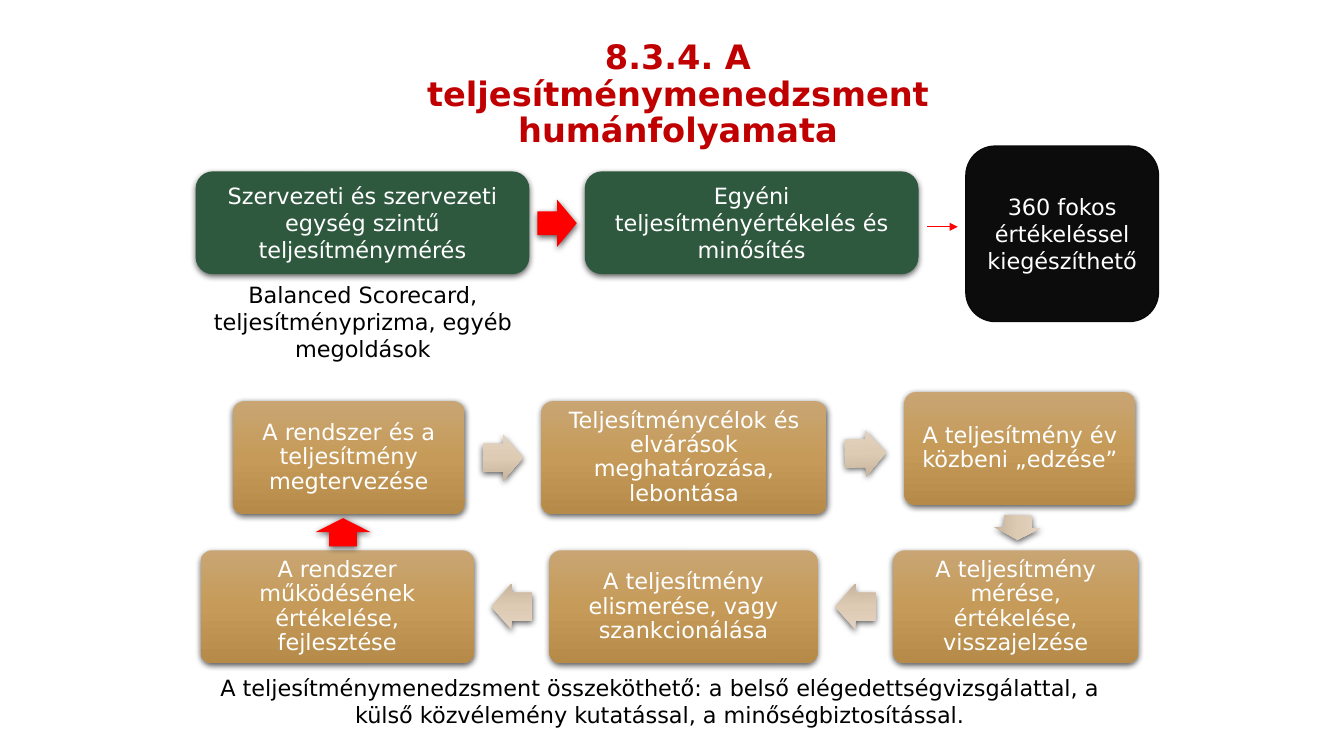
from copy import deepcopy

from lxml import etree
from pptx import Presentation
from pptx.dml.color import RGBColor
from pptx.enum.shapes import MSO_CONNECTOR, MSO_SHAPE
from pptx.enum.text import MSO_ANCHOR, PP_ALIGN
from pptx.oxml.ns import qn
from pptx.util import Inches, Pt

ROUNDED = MSO_SHAPE.ROUNDED_RECTANGLE
RIGHT_ARROW = MSO_SHAPE.RIGHT_ARROW
UP_ARROW = MSO_SHAPE.UP_ARROW
STRAIGHT = MSO_CONNECTOR.STRAIGHT
MIDDLE = MSO_ANCHOR.MIDDLE
TOP = MSO_ANCHOR.TOP
CENTER = PP_ALIGN.CENTER

FONT = "DejaVu Sans"
RED, GREEN, WHITE, BLACK = "FF0000", "2F593F", "FFFFFF", "000000"
STEP_GRADIENT = ("C8A573", "C69B59", "B68B4A")
ARROW_GRADIENT = ("E2D2C0", "DECBB4", "C8B49D")


def rgb(color):
    """Turn a hex string into a colour."""
    return RGBColor.from_string(color)


def add_effects(properties):
    """Append an empty effect list to shape properties."""
    return etree.SubElement(properties, qn("a:effectLst"))


def add_soft_shadow(shape):
    """Give a shape a soft shadow that falls downwards."""
    effects = shape._element.spPr.find(qn("a:effectLst"))
    shadow = etree.SubElement(effects, qn("a:outerShdw"), blurRad=str(Pt(4.5)),
                              dist=str(Pt(1.5)), dir="5400000", rotWithShape="0")
    tint = etree.SubElement(shadow, qn("a:srgbClr"), val=BLACK)
    etree.SubElement(tint, qn("a:alpha"), val="63000")


def paint(shape, colors):
    """Fill a shape with one colour or a three-stop vertical gradient."""
    if isinstance(colors, str):
        shape.fill.solid()
        shape.fill.fore_color.rgb = rgb(colors)
        return
    shape.fill.gradient()
    shape.fill.gradient_angle = 270
    stops = shape._element.spPr.find(".//" + qn("a:gsLst"))
    stops.append(deepcopy(stops[0]))
    for stop, position, color in zip(shape.fill.gradient_stops, (0, 0.5, 1), colors):
        stop.position = position
        stop.color.rgb = rgb(color)


def add_block(slide, kind, box, colors, shadow=True):
    """Add a borderless preset shape."""
    block = slide.shapes.add_shape(kind, *map(Inches, box))
    block.shadow.inherit = False
    block.line.fill.background()
    paint(block, colors)
    if shadow:
        add_soft_shadow(block)
    return block


def write(frame, text, color, size=16, bold=False, anchor=MIDDLE, spacing=None):
    """Write one centred, wrapped paragraph."""
    frame.word_wrap = True
    frame.vertical_anchor = anchor
    paragraph = frame.paragraphs[0]
    paragraph.alignment = CENTER
    paragraph.line_spacing = spacing
    run = paragraph.add_run()
    run.text = text
    run.font.name = FONT
    run.font.size = Pt(size)
    run.font.bold = bold
    run.font.color.rgb = rgb(color)


def add_title(slide, box, text):
    """Place and write the slide title."""
    title = slide.shapes.title
    title.left, title.top, title.width, title.height = map(Inches, box)
    write(title.text_frame, text, "C00000", 24, True, spacing=0.9)


def add_caption(slide, box, text):
    """Add plain explanatory text."""
    caption = slide.shapes.add_textbox(*map(Inches, box))
    write(caption.text_frame, text, BLACK, anchor=TOP)


def add_levels(slide, box):
    """Draw the two levels of appraisal and the optional 360 degree extension."""
    x, y, width, height = box
    middle = y + height / 2 - 0.07
    level_width, level_height = 3.31, 1.02
    levels = ("Szervezeti és szervezeti egység szintű teljesítménymérés",
              "Egyéni teljesítményértékelés és minősítés")
    for i, text in enumerate(levels):
        level_box = (x + i * 3.86, y + 0.25, level_width, level_height)
        level = add_block(slide, ROUNDED, level_box, GREEN)
        write(level.text_frame, text, WHITE)
    add_block(slide, RIGHT_ARROW, (x + 3.39, middle - 0.27, 0.39, 0.47), RED)
    add_caption(slide, (x + 0.01, y + 1.29, 3.3, 0.91),
                "Balanced Scorecard, teljesítményprizma, egyéb megoldások")

    extension_box = (x + width - 1.91, y, 1.91, 1.74)
    extension = add_block(slide, ROUNDED, extension_box, "0C0C0C", shadow=False)
    extension.line.color.rgb = rgb("090909")
    extension.line.width = Pt(1)
    write(extension.text_frame, "360 fokos értékeléssel kiegészíthető", WHITE)

    link_y = Inches(y + 0.8)
    link = slide.shapes.add_connector(STRAIGHT, Inches(x + 7.25), link_y,
                                      Inches(x + 7.56), link_y)
    link.line.color.rgb = rgb(RED)
    link.line.width = Pt(1)
    etree.SubElement(link.line._get_or_add_ln(), qn("a:tailEnd"), type="triangle")
    add_effects(link._element.spPr)


def middle_between(first, second, axis):
    """Find the middle of the gap between two boxes, or of their centres."""
    starts = first[axis], second[axis]
    ends = first[axis] + first[axis + 2], second[axis] + second[axis + 2]
    if max(starts) > min(ends):
        return (max(starts) + min(ends)) / 2
    return (sum(starts) + sum(ends)) / 4


def add_cycle(slide, box):
    """Draw the six steps of the process and the arrows that link them."""
    x, y, _, height = box
    step_height = 1.12
    lower = height - step_height
    steps = (
        ("A rendszer és a teljesítmény megtervezése", 0.32, 0.09, 2.3),
        ("Teljesítménycélok és elvárások meghatározása, lebontása", 3.38, 0.09, 2.83),
        ("A teljesítmény év közbeni „edzése”", 6.98, 0, 2.29),
        ("A teljesítmény mérése, értékelése, visszajelzése", 6.87, lower, 2.43),
        ("A teljesítmény elismerése, vagy szankcionálása", 3.46, lower, 2.66),
        ("A rendszer működésének értékelése, fejlesztése", 0, lower, 2.71),
    )
    boxes = [(x + dx, y + dy, width, step_height) for _, dx, dy, width in steps]
    for (text, *_), step_box in zip(steps, boxes):
        step = add_block(slide, ROUNDED, step_box, STEP_GRADIENT)
        step.adjustments[0] = 0.1
        frame = step.text_frame
        frame.margin_left = frame.margin_right = Inches(0.1)
        frame.margin_top = frame.margin_bottom = Inches(0.1)
        write(frame, text, WHITE, spacing=0.9)

    arrows = ((0.4, 0.46, 0), (0.41, 0.46, 358.4), (0.24, 0.46, 91.7),
              (0.4, 0.46, 180), (0.4, 0.46, 180), (0.55, 0.28, 0))
    for i, (width, height, rotation) in enumerate(arrows):
        closing = i == len(arrows) - 1
        pair = boxes[i], boxes[(i + 1) % len(boxes)]
        arrow_box = (middle_between(*pair, 0) - width / 2,
                     middle_between(*pair, 1) - height / 2, width, height)
        arrow = add_block(slide, UP_ARROW if closing else RIGHT_ARROW, arrow_box,
                          RED if closing else ARROW_GRADIENT)
        arrow.rotation = rotation
        if not closing:
            arrow.adjustments[0] = 0.6


def main():
    """Build and save the slide."""
    deck = Presentation()
    deck.slide_width, deck.slide_height = Inches(13.33), Inches(7.5)
    slide = deck.slides.add_slide(deck.slide_layouts[5])
    add_title(slide, (3.4, 0.25, 6.65, 1.39),
              "8.3.4. A teljesítménymenedzsment humánfolyamata")
    add_levels(slide, (1.94, 1.45, 9.55, 1.74))
    add_cycle(slide, (1.99, 3.89, 9.3, 2.69))
    add_caption(slide, (1.78, 6.64, 9.53, 0.64),
                "A teljesítménymenedzsment összeköthető: a belső "
                "elégedettségvizsgálattal, a külső közvélemény kutatással, "
                "a minőségbiztosítással.")
    deck.save("out.pptx")


if __name__ == "__main__":
    main()
